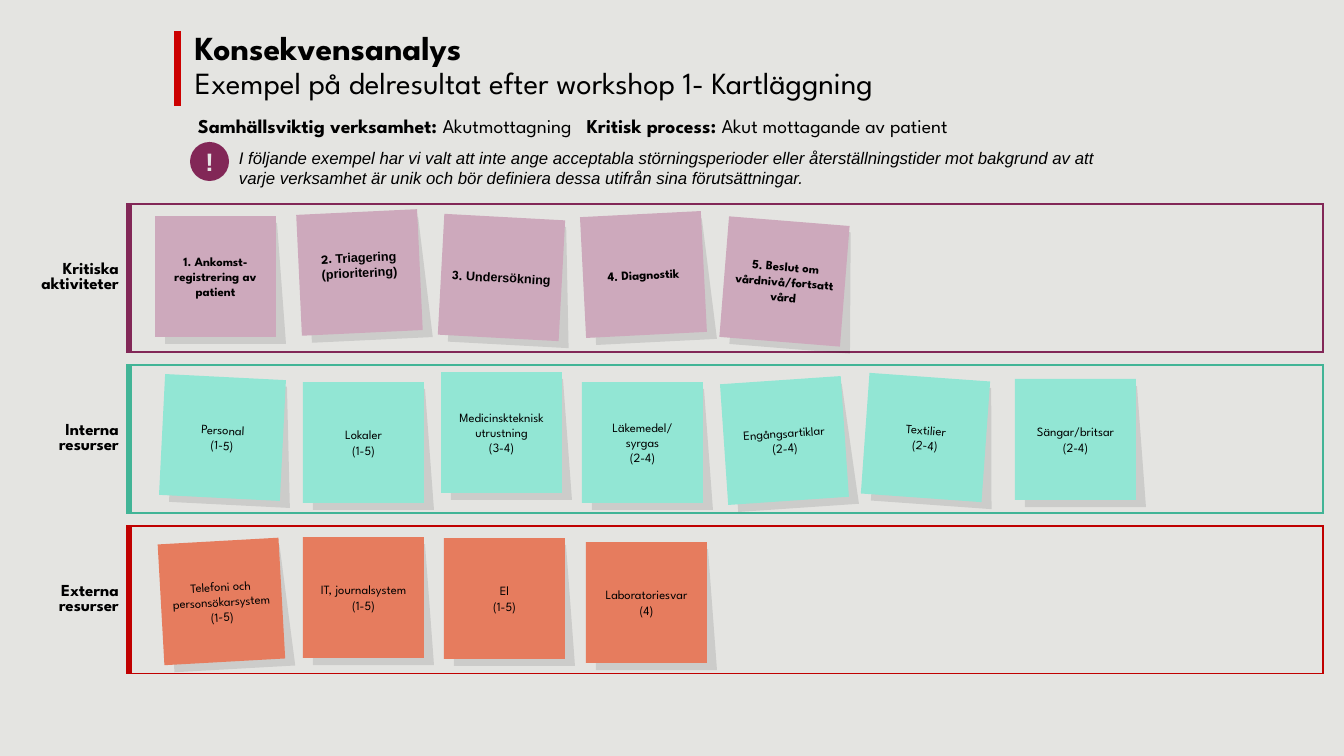
from pptx import Presentation
from pptx.dml.color import RGBColor
from pptx.enum.shapes import MSO_CONNECTOR, MSO_SHAPE
from pptx.enum.text import MSO_ANCHOR, PP_ALIGN
from pptx.oxml.ns import qn
from pptx.util import Pt
from lxml import etree

CENTER, RIGHT = PP_ALIGN.CENTER, PP_ALIGN.RIGHT
TOP, MIDDLE = MSO_ANCHOR.TOP, MSO_ANCHOR.MIDDLE
RECTANGLE, OVAL = MSO_SHAPE.RECTANGLE, MSO_SHAPE.OVAL
STRAIGHT = MSO_CONNECTOR.STRAIGHT

BACKGROUND = RGBColor(0xE4, 0xE4, 0xE1)
BLACK = RGBColor(0, 0, 0)
LIGHT = RGBColor(0xE7, 0xE6, 0xE6)
TITLE_RED = RGBColor(0xCC, 0, 0)
PLUM = RGBColor(0x82, 0x27, 0x57)
GREEN = RGBColor(0x41, 0xB4, 0x96)
RED = RGBColor(0xC0, 0, 0)
PINK = RGBColor(0xCD, 0xA9, 0xBC)
MINT = RGBColor(0x92, 0xE6, 0xD4)
ORANGE = RGBColor(0xE6, 0x7C, 0x5E)
SPARTAN, ARIAL = "League Spartan", "Arial"

TITLE = [("Konsekvensanalys", 24, True),
         ("Exempel på delresultat efter workshop 1- Kartläggning", 22, False)]
CONTEXT = [("Samhällsviktig verksamhet: ", True), ("Akutmottagning\t", False),
           ("Kritisk process: ", True), ("Akut mottagande av patient", False)]
REMARK = ("I följande exempel har vi valt att inte ange acceptabla störningsperioder eller "
          "återställningstider mot bakgrund av att varje verksamhet är unik och bör definiera "
          "dessa utifrån sina förutsättningar.")

LANES = [
    ("Kritiska\naktiviteter", PLUM, PINK, True, [
        (155, 216, 0, "1. Ankomst-registrering av patient", ""),
        (299, 212, -2.7, "2. ", "Triagering (prioritering)"),
        (441, 217, 3.1, "3. ", "Undersökning"),
        (583, 214, -2.9, "4. Diagnostik", ""),
        (724, 221, 4.6, "5. Beslut om vårdnivå/fortsatt vård", "")]),
    ("Interna\nresurser", GREEN, MINT, False, [
        (162, 377, 2.9, "Personal\n(1-5)", ""),
        (303, 382, 0, "Lokaler\n(1-5)", ""),
        (441, 372, 0, "Medicinskteknisk utrustning\n(3-4)", ""),
        (582, 382, 0, "Läkemedel/\nsyrgas\n(2-4)", ""),
        (724, 380, -3.9, "Engångsartiklar\n(2-4)", ""),
        (865, 377, 4.1, "Textilier\n(2-4)", ""),
        (1015, 379, 0, "Sängar/britsar\n(2-4)", "")]),
    ("Externa\nresurser", RED, ORANGE, False, [
        (161, 541, -3.2, "Telefoni och personsökarsystem\n(1-5)", ""),
        (303, 537, 0, "IT, journalsystem\n(1-5)", ""),
        (444, 538, 0, "El\n(1-5)", ""),
        (586, 542, 0, "Laboratoriesvar\n(4)", "")]),
]
TABLE_LEFT, TABLE_TOP = 17, 204
LABEL_WIDTH, LANE_WIDTH = 112, 1194
LANE_HEIGHT, GAP = 148, 13
NOTE = 121
SHADOW_CORNERS = [(112, 0), (NOTE, NOTE), (0, NOTE)]
SHADOW_DX, SHADOW_DY = 10, 7
LIFTED_NOTE, LIFT = "2. ", 15
NO_GRID_STYLE = "{2D5ABB26-0587-4C30-8999-92F81FD0307C}"


def px(length):
    return round(length * 914400 / 100.8)


def set_font(paragraph, size, name=SPARTAN, color=BLACK, bold=False, italic=False):
    font = paragraph.font
    font.size, font.name, font.bold, font.italic = Pt(size), name, bold, italic
    font.color.rgb = color


def add_text_box(slide, *box):
    frame = slide.shapes.add_textbox(*map(px, box)).text_frame
    frame.word_wrap = True
    frame.vertical_anchor = TOP
    return frame


def add_filled_shape(shapes, kind, box, color):
    shape = shapes.add_shape(kind, *map(px, box))
    shape.shadow.inherit = False
    shape.fill.solid()
    shape.fill.fore_color.rgb = color
    shape.line.fill.background()
    frame = shape.text_frame
    frame.word_wrap = True
    frame.vertical_anchor = MIDDLE
    frame.margin_left = frame.margin_right = frame.margin_top = frame.margin_bottom = 0
    frame.paragraphs[0].alignment = CENTER
    return shape


def add_note(slide, note, color, bold):
    left, top, angle, text, arial_text = note
    shapes = slide.shapes.add_group_shape().shapes
    builder = shapes.build_freeform(0, 0)
    builder.add_line_segments([(px(x), px(y)) for x, y in SHADOW_CORNERS])
    shadow = builder.convert_to_shape(px(left + SHADOW_DX), px(top + SHADOW_DY))
    shadow.shadow.inherit = False
    shadow.fill.solid()
    shadow.fill.fore_color.rgb = BLACK
    shadow.line.fill.background()
    tint = shadow._element.spPr.find(".//" + qn("a:srgbClr"))
    etree.SubElement(tint, qn("a:alpha"), val="10000")

    square = add_filled_shape(shapes, RECTANGLE, (left, top, NOTE, NOTE), color)
    shadow.rotation = square.rotation = angle
    paragraph = square.text_frame.paragraphs[0]
    paragraph.text = text
    set_font(paragraph, 9, bold=bold)
    if arial_text:
        run = paragraph.add_run()
        run.text = arial_text
        run.font.name = ARIAL
    if text == LIFTED_NOTE:
        square.text_frame.margin_bottom = px(LIFT)


def set_borders(cell, borders):
    properties = cell._tc.get_or_add_tcPr()
    for side in "LRTB":
        if side in borders:
            color, width = borders[side]
            line = etree.SubElement(properties, qn("a:ln" + side), w=str(Pt(width)))
            fill = etree.SubElement(line, qn("a:solidFill"))
            etree.SubElement(fill, qn("a:srgbClr"), val=str(color))
    cell.fill.background()


def add_lanes(slide):
    row_count = 2 * len(LANES) - 1
    heights = [GAP if row % 2 else LANE_HEIGHT for row in range(row_count)]
    box = (TABLE_LEFT, TABLE_TOP, LABEL_WIDTH + LANE_WIDTH, sum(heights))
    table = slide.shapes.add_table(row_count, 2, *map(px, box)).table
    table.first_row = table.horz_banding = False
    table._tbl.tblPr.find(qn("a:tableStyleId")).text = NO_GRID_STYLE
    for column, width in zip(table.columns, (LABEL_WIDTH, LANE_WIDTH)):
        column.width = px(width)
    for row, height in enumerate(heights):
        table.rows[row].height = px(height)
        label, lane = table.cell(row, 0), table.cell(row, 1)
        text, color = LANES[row // 2][:2]
        if row % 2:
            for cell in (label, lane):
                cell.margin_top = cell.margin_bottom = 0
                cell.text_frame.paragraphs[0]._p.get_or_add_endParaRPr().set("sz", "100")
            set_borders(label, {})
            set_borders(lane, {"T": (color, 1), "B": (LANES[row // 2 + 1][1], 1)})
        else:
            label.vertical_anchor = MIDDLE
            paragraph = label.text_frame.paragraphs[0]
            paragraph.text = text.replace("\n", "\v")
            paragraph.alignment = RIGHT
            set_font(paragraph, 12, bold=True)
            set_borders(label, {"R": (color, 4.5)})
            set_borders(lane, {"L": (color, 4.5), "R": (color, 1),
                               "T": (color, 1), "B": (color, 1)})


def add_header(slide):
    frame = add_text_box(slide, 185, 27, 1129, 47)
    for index, (text, size, bold) in enumerate(TITLE):
        paragraph = frame.add_paragraph() if index else frame.paragraphs[0]
        paragraph.text = text
        paragraph.line_spacing = 0.9
        set_font(paragraph, size, bold=bold)

    bar = slide.shapes.add_connector(STRAIGHT, px(178), px(31), px(178), px(106))
    bar.line.color.rgb = TITLE_RED
    bar.line.width = Pt(5)
    etree.SubElement(bar._element.spPr, qn("a:effectLst"))

    paragraph = add_text_box(slide, 188, 109, 1135, 34).paragraphs[0]
    tabs = etree.SubElement(paragraph._p.get_or_add_pPr(), qn("a:tabLst"))
    etree.SubElement(tabs, qn("a:tab"), pos=str(px(389)), algn="l")
    set_font(paragraph, 14)
    for text, bold in CONTEXT:
        run = paragraph.add_run()
        run.text = text
        run.font.bold = bold

    paragraph = add_text_box(slide, 229, 143, 917, 50).paragraphs[0]
    paragraph.text = REMARK
    set_font(paragraph, 12, ARIAL, italic=True)

    badge = add_filled_shape(slide.shapes, OVAL, (190, 142, 39, 39), PLUM)
    paragraph = badge.text_frame.paragraphs[0]
    paragraph.text = "!"
    set_font(paragraph, 18, ARIAL, LIGHT, bold=True)


def main():
    presentation = Presentation()
    presentation.slide_width, presentation.slide_height = px(1344), px(756)
    slide = presentation.slides.add_slide(presentation.slide_layouts[6])
    slide.background.fill.solid()
    slide.background.fill.fore_color.rgb = BACKGROUND
    add_lanes(slide)
    add_header(slide)
    for _, _, color, bold, notes in LANES:
        for note in notes:
            add_note(slide, note, color, bold)
    presentation.save("out.pptx")


if __name__ == "__main__":
    main()
